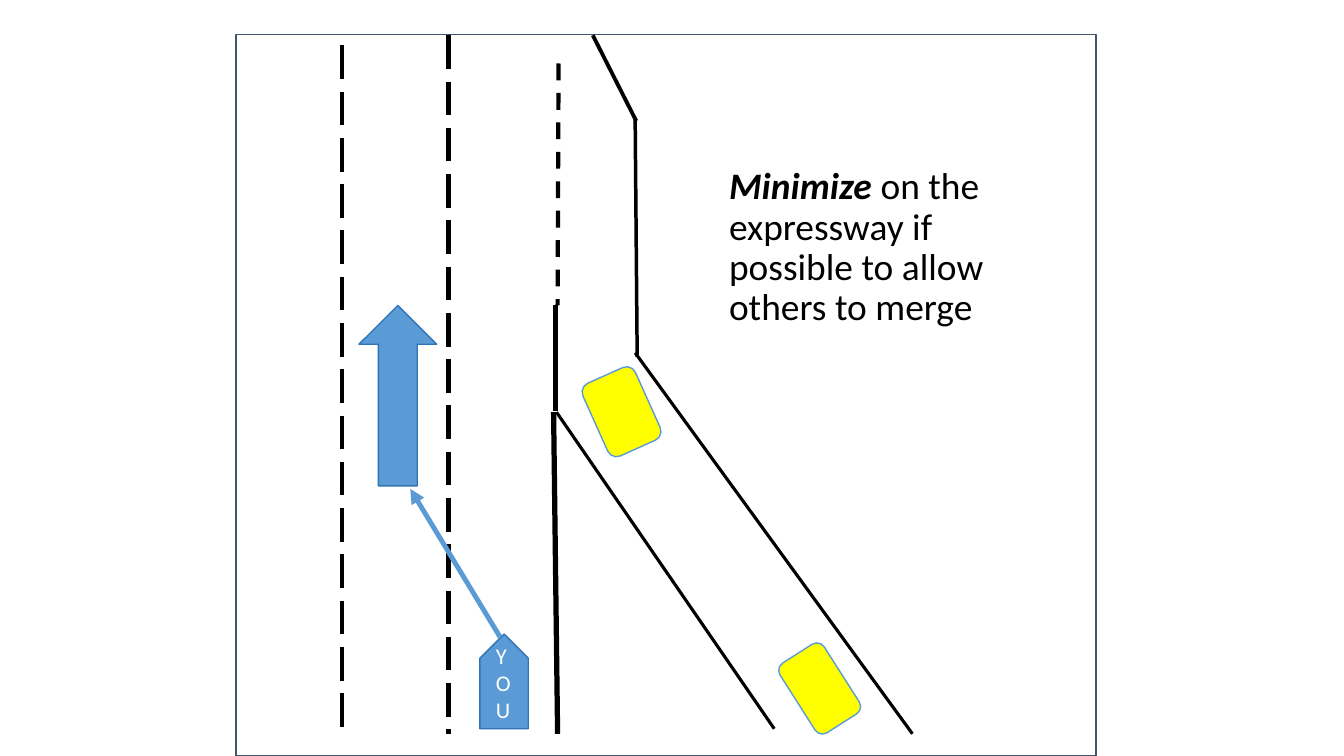
from dataclasses import dataclass
from lxml.etree import SubElement
from pptx import Presentation
from pptx.dml.color import RGBColor
from pptx.enum.dml import MSO_LINE
from pptx.enum.shapes import MSO_CONNECTOR, MSO_SHAPE
from pptx.enum.text import MSO_ANCHOR, MSO_AUTO_SIZE, PP_ALIGN
from pptx.oxml.ns import qn
from pptx.util import Inches, Pt


@dataclass(frozen=True)
class Theme:
    font: str = "Calibri"
    black: str = "000000"
    white: str = "FFFFFF"
    frame: str = "44546A"
    blue: str = "5B9BD5"
    edge: str = "2E75B6"
    car: str = "FFFF00"
    advice_size: float = 26.7
    label_size: float = 16
    outline: float = 1


T = Theme()
LONG, DASH = MSO_LINE.LONG_DASH, MSO_LINE.DASH

# All places are percentages of the slide's width and height.
ADVICE = [
    ("Minimize ", True),
    ("on the expressway if possible to allow others to merge", False),
]
ADVICE_BOX = (53.49, 21.47, 24.16, 31.07)
LABEL = "YOU"
LABEL_BOX = (36.16, 84.27, 2.18, 12.13)
FRAME_BOX = (17.55, 4.53, 63.99, 95.47)
ROAD_LINES = [
    ((25.43, 6), (25.43, 97.07), 3, LONG),
    ((33.38, 4.67), (33.38, 97.07), 3, LONG),
    ((41.41, 54.53), (57.61, 96.4), 2.25, None),
    ((47.26, 15.87), (47.41, 47.2), 2.5, None),
    ((47.26, 46.67), (67.89, 97.07), 2.25, None),
    ((41.19, 54.53), (41.49, 97.07), 3.75, None),
    ((41.34, 40.4), (41.34, 54.4), 3, None),
    ((41.56, 8.4), (41.49, 40.4), 3, DASH),
    ((44.11, 4.67), (47.34, 16), 2.75, None),
]
LANE_CHANGE = ((37.21, 84.27), (30.53, 64.67), 3.5)
VEHICLES = [
    (MSO_SHAPE.ROUNDED_RECTANGLE, (44.11, 49.2, 4.28, 10.53), 335.8, T.car, T.blue),
    (MSO_SHAPE.ROUNDED_RECTANGLE, (59.04, 85.6, 3.9, 10.93), 327.5, T.car, T.blue),
    (MSO_SHAPE.PENTAGON, (33.98, 86.93, 7.05, 6.4), 270, T.blue, T.edge),
    (MSO_SHAPE.UP_ARROW, (26.71, 40.4, 5.78, 23.87), 0, T.blue, T.edge),
]

prs = Presentation()
prs.slide_width, prs.slide_height = Inches(13.33), Inches(7.5)
s = prs.slides.add_slide(prs.slide_layouts[1])


def place(x, y):
    return round(prs.slide_width * x / 100), round(prs.slide_height * y / 100)


def box(left, top, width, height):
    return place(left, top) + place(width, height)


def add_block(kind, area, rotation, fill, line):
    sp = s.shapes.add_shape(kind, *box(*area))
    sp.rotation = rotation
    sp.shadow.inherit = False
    sp.fill.solid()
    sp.fill.fore_color.rgb = RGBColor.from_string(fill)
    sp.line.color.rgb = RGBColor.from_string(line)
    sp.line.width = Pt(T.outline)


def add_line(start, end, width, dash=None, color=T.black):
    cx = s.shapes.add_connector(MSO_CONNECTOR.STRAIGHT, *place(*start), *place(*end))
    cx.line.color.rgb = RGBColor.from_string(color)
    cx.line.width = Pt(width)
    if dash:
        cx.line.dash_style = dash
    SubElement(cx.element.spPr, qn("a:effectLst"))
    return cx


def add_run(p, text, size, color, strong=False):
    r = p.add_run()
    r.text = text
    r.font.name, r.font.size = T.font, Pt(size)
    r.font.bold = r.font.italic = strong
    r.font.color.rgb = RGBColor.from_string(color)


title, body = s.placeholders
title.element.getparent().remove(title.element)

add_block(MSO_SHAPE.RECTANGLE, FRAME_BOX, 0, T.white, T.frame)
for road_line in ROAD_LINES:
    add_line(*road_line)
for vehicle in VEHICLES:
    add_block(*vehicle)

cx = add_line(*LANE_CHANGE, color=T.blue)
SubElement(cx.line._get_or_add_ln(), qn("a:tailEnd"), type="triangle")

label = s.shapes.add_textbox(*box(*LABEL_BOX))
tf = label.text_frame
tf.word_wrap = True
for i, letter in enumerate(LABEL):
    p = tf.add_paragraph() if i else tf.paragraphs[0]
    add_run(p, letter, T.label_size, T.white)

s.shapes.element.append(body.element)
body.left, body.top, body.width, body.height = box(*ADVICE_BOX)
tf = body.text_frame
tf.word_wrap = True
tf.auto_size = MSO_AUTO_SIZE.NONE
tf.vertical_anchor = MSO_ANCHOR.TOP
p = tf.paragraphs[0]
pPr = p._p.get_or_add_pPr()
pPr.set("marL", "0")
pPr.set("indent", "0")
SubElement(pPr, qn("a:buNone"))
p.alignment = PP_ALIGN.LEFT
p.line_spacing = 0.9
p.space_before = Pt(0)
for text, strong in ADVICE:
    add_run(p, text, T.advice_size, T.black, strong)

prs.save("out.pptx")
